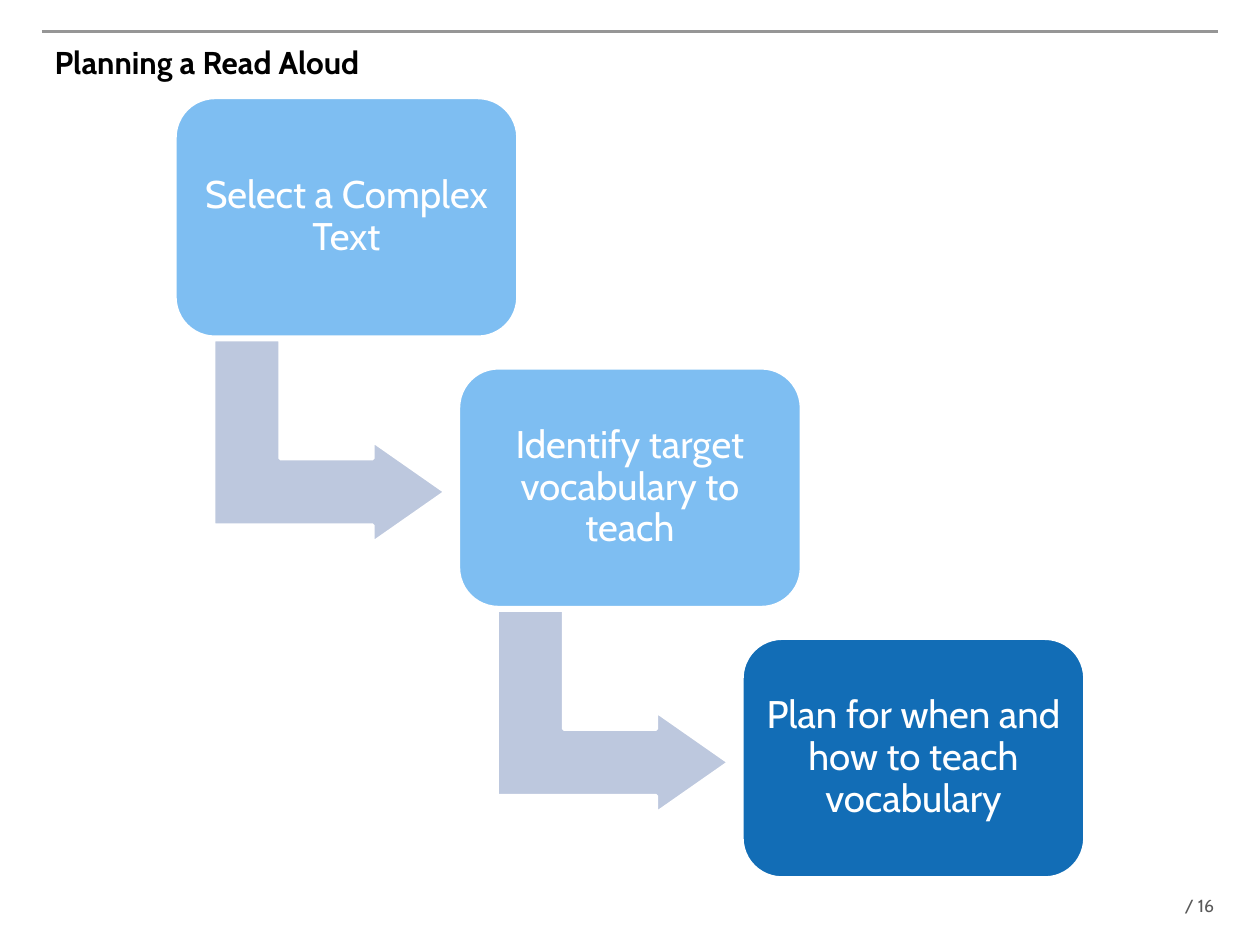
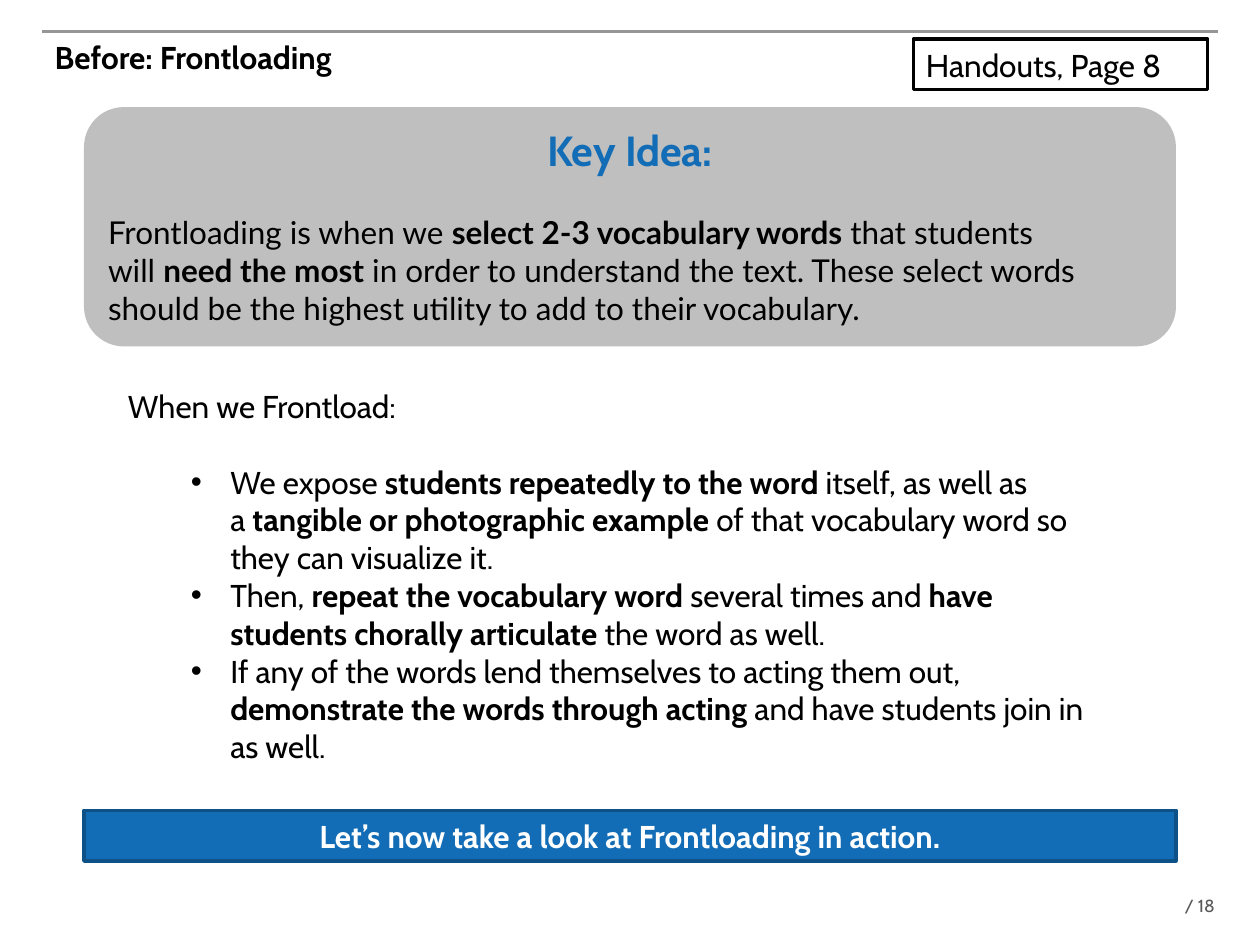
from lxml import etree
from pptx import Presentation
from pptx.dml.color import RGBColor
from pptx.enum.shapes import MSO_CONNECTOR, MSO_SHAPE
from pptx.enum.text import MSO_ANCHOR, MSO_AUTO_SIZE, PP_ALIGN
from pptx.oxml.ns import qn
from pptx.util import Pt

RECT, ROUND_RECT = MSO_SHAPE.RECTANGLE, MSO_SHAPE.ROUNDED_RECTANGLE
BENT_ARROW = MSO_SHAPE.BENT_UP_ARROW
STRAIGHT = MSO_CONNECTOR.STRAIGHT
TOP, MIDDLE = MSO_ANCHOR.TOP, MSO_ANCHOR.MIDDLE
LEFT, CENTER = PP_ALIGN.LEFT, PP_ALIGN.CENTER
NO_AUTOFIT = MSO_AUTO_SIZE.NONE
TITLE_ONLY = 5

BLACK = RGBColor(0x00, 0x00, 0x00)
WHITE = RGBColor(0xFF, 0xFF, 0xFF)
BLUE = RGBColor(0x12, 0x6D, 0xB6)
DARK_BLUE = RGBColor(0x0D, 0x51, 0x87)
LIGHT_BLUE = RGBColor(0x7E, 0xBE, 0xF2)
ARROW_BLUE = RGBColor(0xBD, 0xC8, 0xDE)
PANEL_GRAY = RGBColor(0xBF, 0xBF, 0xBF)
RULE_GRAY = RGBColor(0x96, 0x96, 0x96)
FOOTER_GRAY = RGBColor(0x59, 0x59, 0x59)

BODY = dict(name="Cabin", size=Pt(18))
LATO = dict(name="Lato", size=Pt(18))
TITLE = dict(BODY, bold=True)
KEY = dict(TITLE, size=Pt(24))
STEP = dict(BODY, size=Pt(22))
FOOTER = dict(BODY, size=Pt(10))

NBSP = chr(160)
BLANK_LINE = Pt(21.7)

STEPS = [
    ("Select a Complex Text", LIGHT_BLUE),
    ("Identify target vocabulary to teach", LIGHT_BLUE),
    ("Plan for when and how to teach vocabulary", BLUE),
]
STEP_LEFT, STEP_TOP, STEP_W, STEP_H = 100, 55.7, 196, 137
STEP_DX, STEP_DY = 162, 154.5
ARROW_DX, ARROW_DY, ARROW_W, ARROW_H = 30.3, 130.2, 116, 132.5

KEY_IDEA = (
    "Frontloading is when we~**select 2-3 vocabulary words**~that students "
    "will~**need the most**~in order to understand the text. These select words "
    "should be the highest utility to add to their vocabulary."
)
FRONTLOAD_POINTS = [
    "We expose~**students repeatedly to the word**~itself, as well as "
    "a~**tangible or photographic example**~of that vocabulary word so they can visualize it.",
    "Then,~**repeat the vocabulary word**~several times and~"
    "**have students chorally articulate**~the word as well.",
    "If any of the words lend themselves to acting them out, "
    "**demonstrate the words through acting **and have students join in as well.",
]


def apply(obj, values):
    """Set each attribute of obj from a dict."""
    for name, value in values.items():
        setattr(obj, name, value)


def set_frame(tf, anchor=TOP, inset=(7.2, 3.6, 7.2, 3.6)):
    """Set wrapping, anchor and insets of a text frame."""
    left, top, right, bottom = map(Pt, inset)
    apply(tf, dict(word_wrap=True, auto_size=NO_AUTOFIT, vertical_anchor=anchor,
                   margin_left=left, margin_top=top, margin_right=right, margin_bottom=bottom))


def write(p, text, font, color, align=LEFT, bullet=False, **spacing):
    """Fill a paragraph, with ** around bold words and ~ for a fixed space."""
    if bullet:
        p_pr = p._p.get_or_add_pPr()
        p_pr.set("marL", str(Pt(58.5)))
        p_pr.set("indent", str(Pt(-22.5)))
        etree.SubElement(p_pr, qn("a:buFont")).set("typeface", "Arial")
        etree.SubElement(p_pr, qn("a:buChar")).set("char", "•")
    apply(p, dict(spacing, alignment=align))
    for i, part in enumerate(text.replace("~", NBSP).split("**")):
        if part:
            r = p.add_run()
            r.text = part
            apply(r.font, font)
            r.font.color.rgb = color
            if i % 2:
                r.font.bold = True


def add_box(slide, kind, box, fill, line=None):
    """Add a filled preset shape, outlined if a line colour is given."""
    sp = slide.shapes.add_shape(kind, *map(Pt, box))
    sp.shadow.inherit = False
    sp.fill.solid()
    sp.fill.fore_color.rgb = fill
    if line is None:
        sp.line.fill.background()
    else:
        sp.line.color.rgb = line
        sp.line.width = Pt(2)
    return sp


def add_label(slide, box, text, fill, line, color, font, align):
    """Add a rectangle with one line of text."""
    tf = add_box(slide, RECT, box, fill, line).text_frame
    set_frame(tf, MIDDLE)
    write(tf.paragraphs[0], text, font, color, align)


def add_text(slide, box, **frame):
    """Add a text box and return its text frame."""
    tf = slide.shapes.add_textbox(*map(Pt, box)).text_frame
    set_frame(tf, **frame)
    return tf


def add_slide(prs, title, title_top, page):
    """Add a slide with its top rule, title and page number."""
    slide = prs.slides.add_slide(prs.slide_layouts[TITLE_ONLY])
    rule = slide.shapes.add_connector(STRAIGHT, Pt(24), Pt(18), Pt(696), Pt(18))
    rule.line.color.rgb = RULE_GRAY
    rule.line.width = Pt(2)
    etree.SubElement(rule._element.spPr, qn("a:effectLst"))
    sp = slide.shapes.title
    apply(sp, dict(left=Pt(24), top=Pt(title_top), width=Pt(624), height=Pt(66)))
    set_frame(sp.text_frame)
    write(sp.text_frame.paragraphs[0], title, TITLE, BLACK)
    tf = add_text(slide, (674.6, 511.2, 45, 12.2), inset=(2.4, 0, 0, 0))
    write(tf.paragraphs[0], f"/ {page}", FOOTER, FOOTER_GRAY)
    return slide


def add_arrow(slide, left, top):
    """Add a bent arrow that leads down and right to the next step."""
    sp = add_box(slide, BENT_ARROW, (left, top, ARROW_W, ARROW_H), ARROW_BLUE, WHITE)
    sp.rotation = 90
    for i, value in enumerate((0.328, 0.25, 0.358)):
        sp.adjustments[i] = value


def add_steps(slide):
    """Add the descending staircase of steps and arrows."""
    for i, (text, fill) in enumerate(STEPS):
        left, top = STEP_LEFT + i * STEP_DX, STEP_TOP + i * STEP_DY
        if i < len(STEPS) - 1:
            add_arrow(slide, left + ARROW_DX, top + ARROW_DY)
        sp = add_box(slide, ROUND_RECT, (left, top, STEP_W, STEP_H), fill, WHITE)
        set_frame(sp.text_frame, MIDDLE, (6.6,) * 4)
        write(sp.text_frame.paragraphs[0], text, STEP, WHITE, CENTER, line_spacing=0.9)


def add_key_idea(slide):
    """Add the gray panel with the key idea."""
    tf = add_box(slide, ROUND_RECT, (48, 61.2, 624, 136.8), PANEL_GRAY).text_frame
    set_frame(tf)
    write(tf.paragraphs[0], "Key Idea:", KEY, BLUE, CENTER)
    write(tf.add_paragraph(), KEY_IDEA, LATO, BLACK, space_before=BLANK_LINE)


def add_frontload_points(slide):
    """Add the lead-in line and its bullet list."""
    tf = add_text(slide, (66, 217.5, 574.6, 225.4))
    write(tf.paragraphs[0], "When we Frontload:", BODY, BLACK, space_after=BLANK_LINE)
    for point in FRONTLOAD_POINTS:
        write(tf.add_paragraph(), point, BODY, BLACK, bullet=True, space_before=Pt(0))


def main():
    """Build both slides and save them."""
    prs = Presentation()
    prs.slide_width, prs.slide_height = Pt(720), Pt(540)

    add_steps(add_slide(prs, "Planning a Read Aloud", 21, 16))

    slide = add_slide(prs, "Before: Frontloading", 18, 18)
    add_key_idea(slide)
    add_frontload_points(slide)
    add_label(slide, (48, 463, 624, 29), "Let’s now take a look at Frontloading in action.",
              BLUE, DARK_BLUE, WHITE, TITLE, CENTER)
    add_label(slide, (522, 22.3, 168, 29), "Handouts, Page 8",
              WHITE, BLACK, BLACK, BODY, LEFT)

    prs.save("out.pptx")


if __name__ == "__main__":
    main()
